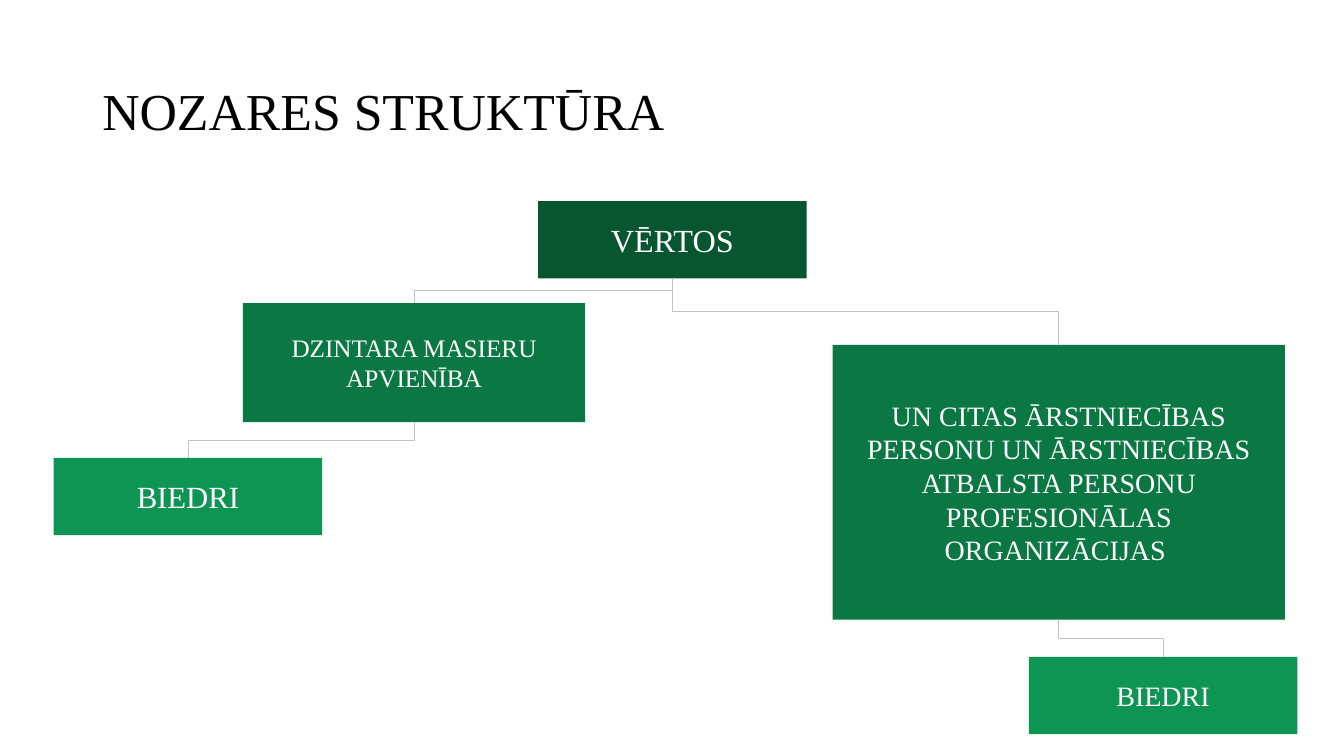
from lxml.etree import SubElement
from pptx import Presentation
from pptx.dml.color import RGBColor
from pptx.enum.shapes import MSO_CONNECTOR as Connector, MSO_SHAPE as Shape
from pptx.enum.text import MSO_ANCHOR as Anchor, PP_ALIGN as Align
from pptx.oxml.ns import qn
from pptx.util import Pt

FONT = "Times New Roman"
BLACK = RGBColor(0x00, 0x00, 0x00)
WHITE = RGBColor(0xFF, 0xFF, 0xFF)
LINE_GRAY = RGBColor(0xC2, 0xC2, 0xC2)
LEVEL_FILLS = (
    RGBColor(0x08, 0x56, 0x30),
    RGBColor(0x0B, 0x77, 0x43),
    RGBColor(0x0E, 0x94, 0x53),
)
PADDING = 9.36
SMALL_BOX = (191.8, 55.2)

# (text, size, (left, top, width, height) within the chart, children)
ORGANISATION = ("VĒRTOS", 23, (346, 0, *SMALL_BOX), [
    ("DZINTARA MASIERU APVIENĪBA", 18, (135.2, 73, 244.4, 85), [
        ("BIEDRI", 22, (0, 183.5, *SMALL_BOX), []),
    ]),
    ("UN CITAS ĀRSTNIECĪBAS PERSONU UN ĀRSTNIECĪBAS ATBALSTA PERSONU "
     "PROFESIONĀLAS ORGANIZĀCIJAS ", 20, (556.4, 102.8, 323, 196.2), [
        ("BIEDRI", 20, (696.5, 325.6, *SMALL_BOX), []),
    ]),
])


def style_text(paragraph, size, color):
    font = paragraph.runs[0].font
    font.name, font.size, font.color.rgb = FONT, Pt(size), color


def add_title(slide, left, top, width, height):
    heading = slide.shapes.add_textbox(Pt(left), Pt(top), Pt(width), Pt(height))
    frame = heading.text_frame
    frame.word_wrap = True
    frame.vertical_anchor = Anchor.MIDDLE
    frame.text = "NOZARES STRUKTŪRA"
    frame.paragraphs[0].line_spacing = 0.9
    style_text(frame.paragraphs[0], 37, BLACK)


def add_unit(slide, text, size, fill, left, top, width, height):
    unit = slide.shapes.add_shape(Shape.RECTANGLE, Pt(left), Pt(top), Pt(width), Pt(height))
    unit.shadow.inherit = False
    unit.fill.solid()
    unit.fill.fore_color.rgb = fill
    unit.line.fill.background()
    frame = unit.text_frame
    frame.word_wrap = True
    frame.vertical_anchor = Anchor.MIDDLE
    frame.margin_left = frame.margin_right = Pt(PADDING)
    frame.margin_top = frame.margin_bottom = Pt(PADDING)
    frame.text = text
    frame.paragraphs[0].alignment = Align.CENTER
    style_text(frame.paragraphs[0], size, WHITE)
    return unit


def link_units(slide, parent, child):
    """Draw an elbow from the parent's bottom centre to the child's top centre."""
    start_x, start_y = parent.left + parent.width // 2, parent.top + parent.height
    end_x, end_y = child.left + child.width // 2, child.top
    link = slide.shapes.add_connector(Connector.ELBOW, start_x, start_y, end_x, end_y)
    link.begin_connect(parent, 2)
    link.end_connect(child, 0)
    link.line.color.rgb = LINE_GRAY
    link.line.width = Pt(0.75)

    # The elbow leaves sideways by default, so its frame is turned a quarter.
    link.width, link.height = end_y - start_y, abs(end_x - start_x)
    link.left = (start_x + end_x - link.width) // 2
    link.top = (start_y + end_y - link.height) // 2
    goes_right = end_x > start_x
    properties = link._element.spPr
    properties.xfrm.rot = 270 if goes_right else 90
    properties.xfrm.flipH = goes_right
    properties.xfrm.flipV = False
    SubElement(properties, qn("a:effectLst"))


def add_branch(slide, left, top, branch, level=0):
    text, size, (x, y, width, height), children = branch
    unit = add_unit(slide, text, size, LEVEL_FILLS[level], left + x, top + y, width, height)
    for child in children:
        link_units(slide, unit, add_branch(slide, left, top, child, level + 1))
    return unit


def main():
    deck = Presentation()
    deck.slide_width, deck.slide_height = Pt(960), Pt(540)
    slide = deck.slides.add_slide(deck.slide_layouts[6])
    add_title(slide, 66, 28.75, 828, 104.4)
    add_branch(slide, 38.4, 143.6, ORGANISATION)
    deck.save("out.pptx")


if __name__ == "__main__":
    main()
